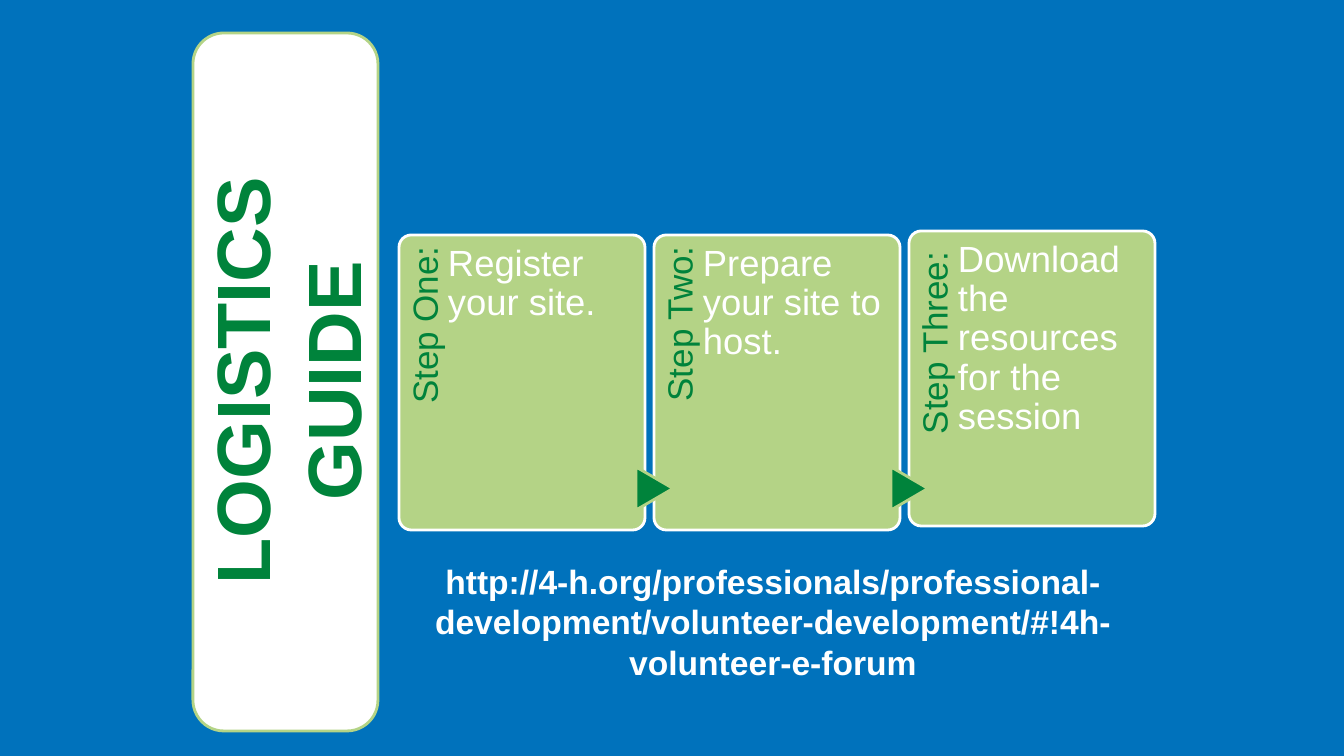
from dataclasses import dataclass

import pptx
import pptx.dml.color
import pptx.enum.shapes
import pptx.enum.text
import pptx.shapes.autoshape
import pptx.util

RGBColor = pptx.dml.color.RGBColor
PRESET = pptx.enum.shapes.MSO_SHAPE
ALIGN = pptx.enum.text.PP_ALIGN
ANCHOR = pptx.enum.text.MSO_ANCHOR

BLUE = RGBColor(0x00, 0x72, 0xBC)
GREEN = RGBColor(0x00, 0x83, 0x3B)
CARD_GREEN = RGBColor(0xB4, 0xD3, 0x86)
EDGE_GREEN = RGBColor(0xB4, 0xD4, 0x86)
WHITE = RGBColor(0xFF, 0xFF, 0xFF)

EMU_PER_PX = 914400 / 100.8
CARD_LEFT, CARD_PITCH = 399, 255
CARD_WIDTH, CARD_HEIGHT = 246, 295
ARROW_TOP = 470


@dataclass(frozen=True)
class Box:
    left: int
    top: int
    width: int
    height: int


@dataclass(frozen=True)
class TextStyle:
    size: int
    color: RGBColor
    bold: bool = False
    align: ALIGN = ALIGN.LEFT
    anchor: ANCHOR = ANCHOR.TOP
    line_spacing: float = 1.0
    insets: tuple[int, int, int, int] = (10, 5, 10, 5)


@dataclass(frozen=True)
class Step:
    label: str
    text: str
    top: int


TITLE_STYLE = TextStyle(54, GREEN, True, ALIGN.CENTER, ANCHOR.MIDDLE)
LABEL_STYLE = TextStyle(25, GREEN, align=ALIGN.RIGHT, line_spacing=0.9,
                        insets=(0, 9, 12, 0))
STEP_STYLE = TextStyle(26, WHITE, line_spacing=0.9, insets=(0, 10, 0, 0))
ADDRESS_STYLE = TextStyle(24, WHITE, True, ALIGN.CENTER)

STEPS = [
    Step("Step One:", "Register your site.", 235),
    Step("Step Two:", "Prepare your site to host.", 235),
    Step("Step Three: ", "Download the resources for the session", 231),
]


def px(length: int) -> pptx.util.Emu:
    return pptx.util.Emu(round(length * EMU_PER_PX))


def edges(box: Box) -> tuple[pptx.util.Emu, ...]:
    return px(box.left), px(box.top), px(box.width), px(box.height)


def write_text(shape, text: str, style: TextStyle) -> None:
    frame = shape.text_frame
    frame.text = text
    frame.word_wrap = True
    frame.auto_size = pptx.enum.text.MSO_AUTO_SIZE.NONE
    frame.vertical_anchor = style.anchor
    (frame.margin_left, frame.margin_top,
     frame.margin_right, frame.margin_bottom) = map(px, style.insets)
    paragraph = frame.paragraphs[0]
    paragraph.alignment = style.align
    paragraph.line_spacing = style.line_spacing
    font = paragraph.runs[0].font
    font.name = "Arial"
    font.size = pptx.util.Pt(style.size)
    font.bold = style.bold
    font.color.rgb = style.color


def add_text(slide, box: Box, text: str, style: TextStyle, rotation: int = 0) -> None:
    shape = slide.shapes.add_textbox(*edges(box))
    shape.rotation = rotation
    write_text(shape, text, style)


def add_preset(slide, preset: PRESET, box: Box, fill: RGBColor,
               line: RGBColor) -> pptx.shapes.autoshape.Shape:
    shape = slide.shapes.add_shape(preset, *edges(box))
    shape.shadow.inherit = False
    shape.fill.solid()
    shape.fill.fore_color.rgb = fill
    shape.line.color.rgb = line
    shape.line.width = pptx.util.Pt(2)
    return shape


def add_title(slide) -> None:
    """Put the upright title in front of its white panel."""
    panel = add_preset(slide, PRESET.ROUNDED_RECTANGLE, Box(193, 33, 185, 698),
                       WHITE, EDGE_GREEN)
    panel.adjustments[0] = 0.167
    title = slide.shapes.title
    title.left, title.top, title.width, title.height = edges(Box(-54, 298, 679, 166))
    title.rotation = 270
    write_text(title, "LOGISTICS GUIDE", TITLE_STYLE)
    panel.element.addnext(title.element)


def add_step(slide, index: int, step: Step) -> None:
    left = CARD_LEFT + index * CARD_PITCH
    card = add_preset(slide, PRESET.ROUNDED_RECTANGLE,
                      Box(left, step.top, CARD_WIDTH, CARD_HEIGHT), CARD_GREEN, WHITE)
    card.adjustments[0] = 0.05
    add_text(slide, Box(left - 97, step.top + 96, 242, 49), step.label,
             LABEL_STYLE, rotation=270)
    if index > 0:
        arrow = add_preset(slide, PRESET.FLOWCHART_EXTRACT,
                           Box(left - 21, ARROW_TOP, 43, 37), GREEN, CARD_GREEN)
        arrow.rotation = 90
    add_text(slide, Box(left + 49, step.top, 183, CARD_HEIGHT), step.text, STEP_STYLE)


def main() -> None:
    presentation = pptx.Presentation()
    presentation.slide_width, presentation.slide_height = px(1344), px(756)
    slide = presentation.slides.add_slide(
        presentation.slide_layouts.get_by_name("Title Only"))
    slide.background.fill.solid()
    slide.background.fill.fore_color.rgb = BLUE

    add_title(slide)
    for index, step in enumerate(STEPS):
        add_step(slide, index, step)
    add_text(slide, Box(370, 556, 806, 132),
             "http://4-h.org/professionals/professional-development/"
             "volunteer-development/#!4h-volunteer-e-forum", ADDRESS_STYLE)
    presentation.save("out.pptx")


if __name__ == "__main__":
    main()
